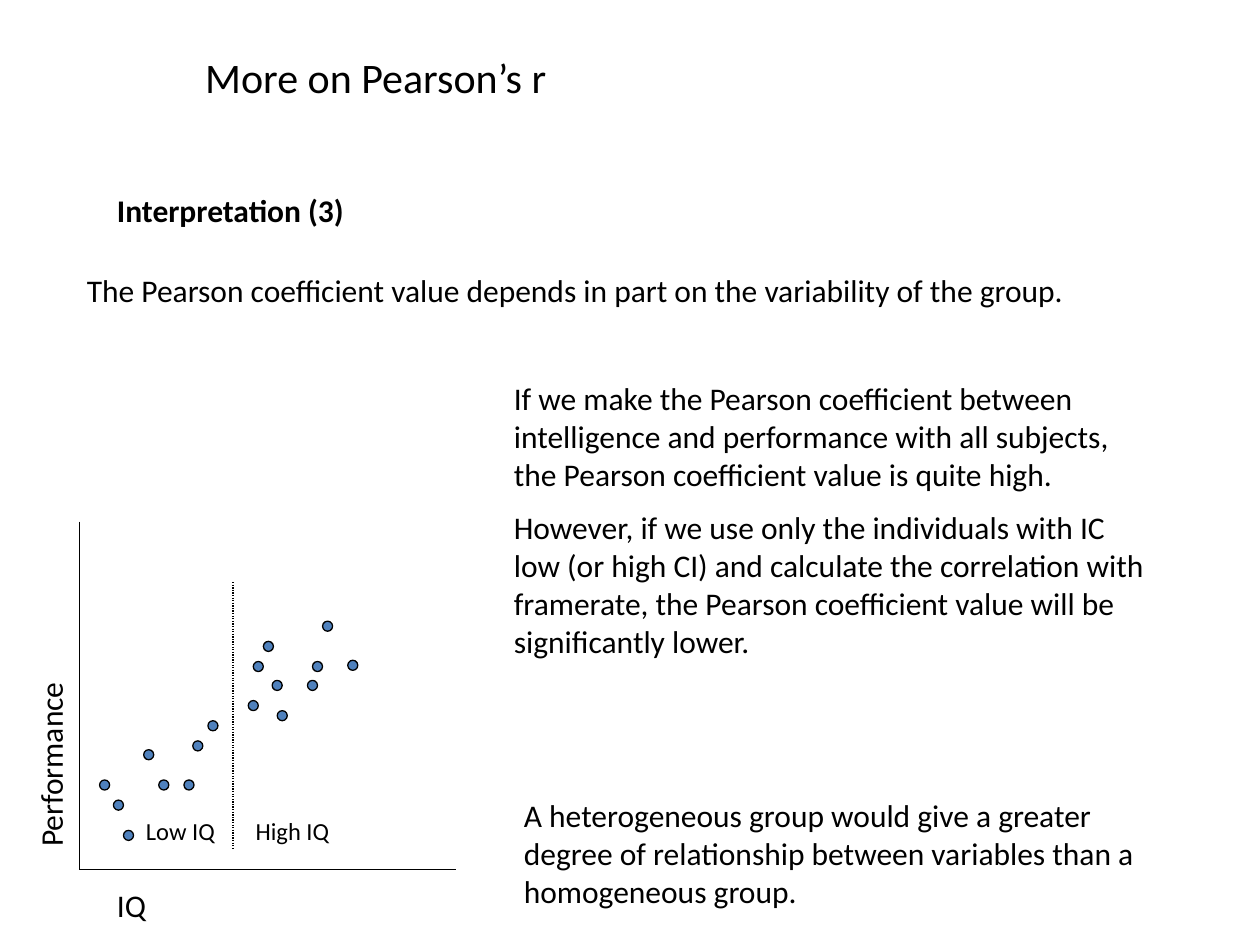
"""Build a slide on how group variability affects Pearson's r."""
from pptx import Presentation
from pptx.dml.color import RGBColor
from pptx.enum.dml import MSO_LINE
from pptx.enum.shapes import MSO_CONNECTOR, MSO_SHAPE
from pptx.oxml.ns import qn
from pptx.util import Pt
from lxml import etree

STRAIGHT = MSO_CONNECTOR.STRAIGHT
OVAL = MSO_SHAPE.OVAL
DOTTED = MSO_LINE.ROUND_DOT
PX = 9144
THEME = {
    "font": "Calibri",
    "ink": RGBColor(0x00, 0x00, 0x00),
    "dot": RGBColor(0x4F, 0x81, 0xBD),
    "title": Pt(24),
    "body": Pt(18),
    "label": Pt(14),
    "gap": Pt(9),
    "stroke": Pt(0.75),
}

prs = Presentation()
prs.slide_width, prs.slide_height = 1000 * PX, 750 * PX
slide = prs.slides.add_slide(prs.slide_layouts[6])


def add_text(left, top, width, height, text, size="body", bold=False):
    box = slide.shapes.add_textbox(left * PX, top * PX, width * PX, height * PX)
    frame = box.text_frame
    frame.word_wrap = True
    frame.text = text
    for index, paragraph in enumerate(frame.paragraphs):
        paragraph.space_before = THEME["gap"] if index else Pt(0)
        font = paragraph.runs[0].font
        font.name, font.size, font.bold = THEME["font"], THEME[size], bold
        font.color.rgb = THEME["ink"]
    return box


def add_line(x1, y1, x2, y2):
    line = slide.shapes.add_connector(STRAIGHT, x1 * PX, y1 * PX, x2 * PX, y2 * PX)
    line.line.color.rgb = THEME["ink"]
    line.line.width = THEME["stroke"]
    etree.SubElement(line._element.spPr, qn("a:effectLst"))
    return line


add_text(153, 36, 788, 50, "More on Pearson’s r", "title")
add_text(83, 147, 772, 40, "Interpretation (3)", bold=True)
add_text(59, 210, 882, 86,
         "The Pearson coefficient value depends in part on the variability of the group.")

ORIGIN_X, ORIGIN_Y = 63, 690
add_line(ORIGIN_X, 414, ORIGIN_X, ORIGIN_Y)
add_line(ORIGIN_X, ORIGIN_Y, 362, ORIGIN_Y)
performance_label = add_text(-94, 528, 268, 40, "Performance")
performance_label.rotation = 270
add_text(83, 698, 252, 40, "IQ")

DOT_SIZE = 8
low_iq = [(79, 619), (90, 635), (98, 659), (114, 595), (126, 619),
          (146, 619), (153, 588), (165, 572)]
high_iq = [(197, 556), (201, 525), (209, 509), (216, 540), (220, 564),
           (244, 540), (248, 525), (256, 493), (276, 524)]
for x, y in low_iq + high_iq:
    subject = slide.shapes.add_shape(OVAL, x * PX, y * PX, DOT_SIZE * PX, DOT_SIZE * PX)
    subject.shadow.inherit = False
    subject.fill.solid()
    subject.fill.fore_color.rgb = THEME["dot"]
    subject.line.color.rgb = THEME["ink"]
    subject.line.width = THEME["stroke"]

group_divider = add_line(185, 462, 185, 674)
group_divider.line.dash_style = DOTTED
for left, group in [(106, "Low IQ"), (193, "High IQ")]:
    add_text(left, 643, 118, 33, group, "label")

add_text(398, 296, 528, 237,
         "If we make the Pearson coefficient between intelligence and performance "
         "with all subjects, the Pearson coefficient value is quite high.\n"
         "However, if we use only the individuals with IC low (or high CI) and "
         "calculate the correlation with framerate, the Pearson coefficient value "
         "will be significantly lower.")
add_text(406, 627, 520, 100,
         "A heterogeneous group would give a greater degree of relationship "
         "between variables than a homogeneous group.")

prs.save("out.pptx")
